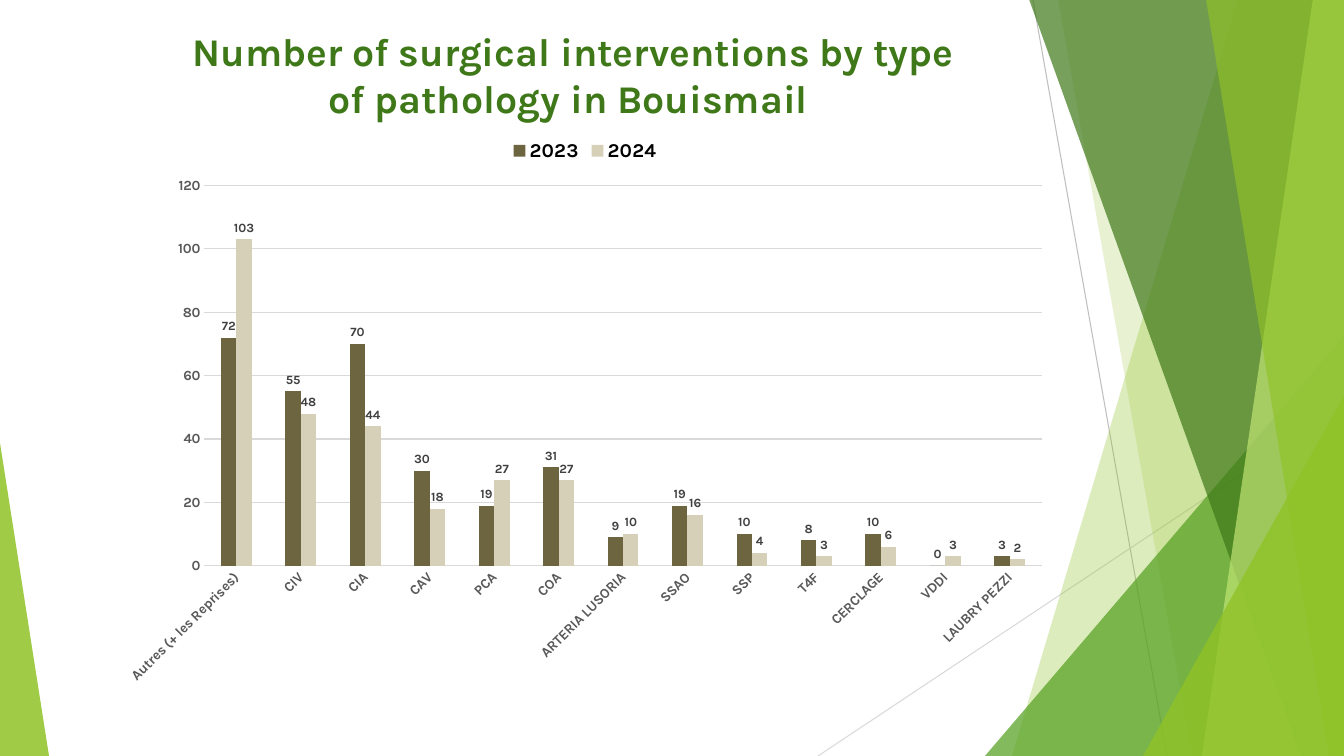
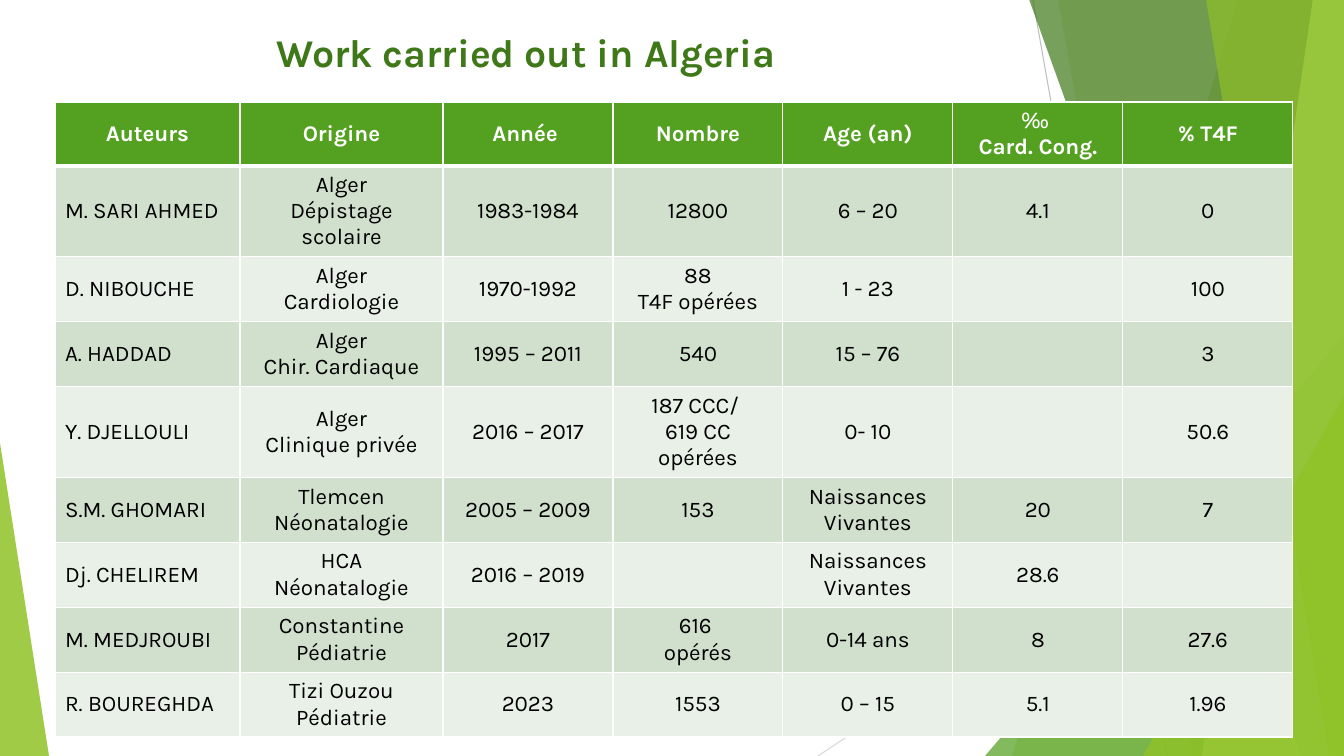
from lxml import etree
from pptx import Presentation
from pptx import util as u
from pptx.chart.data import CategoryChartData
from pptx.dml.color import RGBColor
from pptx.enum import chart as ch, shapes, text
from pptx.oxml.ns import qn

SCALE = 914400 / 100.8
WIDTH, HEIGHT = 1344, 756
FONT = "Karla"
WHITE = RGBColor(0xFF, 0xFF, 0xFF)
BLACK = RGBColor(0x00, 0x00, 0x00)
LIME = RGBColor(0x90, 0xC2, 0x26)
PALE_LIME = RGBColor(0xC0, 0xE4, 0x74)
GREEN = RGBColor(0x54, 0xA0, 0x21)
DARK_GREEN = RGBColor(0x3F, 0x78, 0x19)
BAND_DARK = RGBColor(0xD1, 0xDF, 0xCD)
BAND_LIGHT = RGBColor(0xE9, 0xF0, 0xE8)
GREY = RGBColor(0xBF, 0xBF, 0xBF)
LIGHT_GREY = RGBColor(0xD9, 0xD9, 0xD9)
AXIS_GREY = RGBColor(0x59, 0x59, 0x59)
LABEL_GREY = RGBColor(0x40, 0x40, 0x40)
OLIVE = RGBColor(0x6D, 0x65, 0x40)
SAND = RGBColor(0xD6, 0xD0, 0xB8)


def px(*lengths):
    return [u.Emu(round(n * SCALE)) for n in lengths]


def style(font, size, color, bold=True):
    font.name, font.size, font.bold = FONT, u.Pt(size), bold
    font.color.rgb = color


prs = Presentation()
prs.slide_width, prs.slide_height = px(WIDTH, HEIGHT)

hairlines = [
    ((1033, 0, 1167, HEIGHT), GREY),
    ((WIDTH, 406, 818, HEIGHT), LIGHT_GREY),
]
facets = [
    ("strip", LIME, 30, (1238, 1012)),
    ("strip", LIME, 20, (1058, 1192)),
    ("wedge", GREEN, 72, (985, 336, 359, 1)),
    ("strip", DARK_GREEN, 70, (1029, 1301)),
    ("strip", PALE_LIME, 70, (1313, 1202)),
    ("strip", LIME, 65, (1206, 1329)),
    ("wedge", LIME, 80, (1143, 396, 201, 1)),
    ("wedge", LIME, 85, (0, 443, 49, 0)),
]
titles = [
    ((-34, 22, 1204, 105),
     [" Number of surgical interventions by type", "of pathology in Bouismail"]),
    ((33, 23, 986, 57), ["Work carried out in Algeria"]),
]

slides = []
for title_place, title_lines in titles:
    slide = prs.slides.add_slide(prs.slide_layouts[6])
    slides.append(slide)

    for ends, color in hairlines:
        hairline = slide.shapes.add_connector(shapes.MSO_CONNECTOR.STRAIGHT, *px(*ends))
        hairline.line.color.rgb = color
        hairline.line.width = u.Pt(0.75)
        etree.SubElement(hairline._element.spPr, qn("a:effectLst"))

    for kind, color, opacity, outline in facets:
        if kind == "strip":
            top_left, bottom_left = outline
            builder = slide.shapes.build_freeform(top_left, -1, scale=SCALE)
            builder.add_line_segments([(WIDTH, -1), (WIDTH, HEIGHT), (bottom_left, HEIGHT)])
            facet = builder.convert_to_shape()
        else:
            left, top, width, apex = outline
            facet = slide.shapes.add_shape(
                shapes.MSO_SHAPE.ISOSCELES_TRIANGLE, *px(left, top, width, HEIGHT - top))
            facet.adjustments[0] = apex
        facet.shadow.inherit = False
        facet.line.fill.background()
        facet.fill.solid()
        facet.fill.fore_color.rgb = color
        tint = facet._element.spPr.find(qn("a:solidFill"))[0]
        etree.SubElement(tint, qn("a:alpha"), val=str(opacity * 1000))

    title = slide.shapes.add_textbox(*px(*title_place)).text_frame
    title.word_wrap = True
    for i, line in enumerate(title_lines):
        paragraph = title.add_paragraph() if i else title.paragraphs[0]
        paragraph.alignment = text.PP_ALIGN.CENTER
        run = paragraph.add_run()
        run.text = line
        style(run.font, 28, DARK_GREEN)

interventions_slide, studies_slide = slides

interventions = CategoryChartData()
interventions.categories = [
    "Autres (+ les Reprises)", "CIV", "CIA", "CAV", "PCA", "COA", "ARTERIA LUSORIA",
    "SSAO", "SSP", "T4F", "CERCLAGE", "VDDI", "LAUBRY PEZZI",
]
interventions.add_series("2023", [72, 55, 70, 30, 19, 31, 9, 19, 10, 8, 10, 0, 3])
interventions.add_series("2024", [103, 48, 44, 18, 27, 27, 10, 16, 4, 3, 6, 3, 2])
chart = interventions_slide.shapes.add_chart(
    ch.XL_CHART_TYPE.COLUMN_CLUSTERED, *px(109, 128, 952, 567), interventions).chart
style(chart.font, 10, BLACK, False)
chart.has_title = False
chart.has_legend = True
chart.legend.position = ch.XL_LEGEND_POSITION.TOP
chart.legend.include_in_layout = False
style(chart.legend.font, 14, BLACK)

for axis in (chart.category_axis, chart.value_axis):
    axis.major_tick_mark = axis.minor_tick_mark = ch.XL_TICK_MARK.NONE
    style(axis.tick_labels.font, 10, AXIS_GREY)
pathologies, counts = chart.category_axis, chart.value_axis
pathologies.format.line.color.rgb = LIGHT_GREY
pathologies.format.line.width = u.Pt(0.75)
pathologies._element.find(qn("c:txPr")).find(qn("a:bodyPr")).set("rot", "-2700000")
counts.minimum_scale, counts.maximum_scale, counts.major_unit = 0, 120, 20
counts.format.line.fill.background()
counts.major_gridlines.format.line.color.rgb = LIGHT_GREY
counts.major_gridlines.format.line.width = u.Pt(0.75)

plot = chart.plots[0]
plot.gap_width, plot.overlap, plot.vary_by_categories = 219, 0, False
for year, color in zip(plot.series, (OLIVE, SAND)):
    year.format.fill.solid()
    year.format.fill.fore_color.rgb = color
    labels = year.data_labels
    labels.show_value = True
    labels.position = ch.XL_LABEL_POSITION.OUTSIDE_END
    style(labels.font, 9, LABEL_GREY)

studies = [
    ["Auteurs", "Origine", "Année ", "Nombre", "Age (an)", "‰ \nCard. Cong.", "% T4F"],
    ["M. SARI AHMED", "Alger\nDépistage scolaire", "1983-1984", "12800", "6 – 20", "4.1", "0"],
    ["D. NIBOUCHE", "Alger\nCardiologie", "1970-1992", "88\nT4F opérées", "1 - 23", "", "100"],
    ["A. HADDAD", "Alger\nChir. Cardiaque", "1995 – 2011", "540", "15 – 76", "", "3"],
    ["Y. DJELLOULI", "Alger\nClinique privée", "2016 – 2017",
     "187 CCC/ \n619 CC opérées", "0- 10", "", "50.6"],
    ["S.M. GHOMARI", "Tlemcen\nNéonatalogie", "2005 – 2009", "153",
     "Naissances Vivantes", "20", "7"],
    ["Dj. CHELIREM", "HCA\nNéonatalogie", "2016 – 2019", "", "Naissances Vivantes", "28.6", ""],
    ["M. MEDJROUBI", "Constantine\nPédiatrie", "2017", "616 \nopérés", "0-14 ans", "8", "27.6"],
    ["R. BOUREGHDA", "Tizi Ouzou\nPédiatrie", "2023", "1553", "0 – 15", "5.1", "1.96"],
]
column_widths = [185, 203] + [170] * 5
row_heights = [63, 89, 65, 65, 89, 65, 65, 65, 65]
table = studies_slide.shapes.add_table(
    len(studies), len(column_widths),
    *px(55, 102, sum(column_widths), sum(row_heights))).table
for column, width in zip(table.columns, px(*column_widths)):
    column.width = width
for row, height in zip(table.rows, px(*row_heights)):
    row.height = height

for r, study in enumerate(studies):
    heading = r == 0
    for c, entry in enumerate(study):
        cell = table.cell(r, c)
        cell.vertical_anchor = text.MSO_ANCHOR.MIDDLE
        for side in "LRTB":
            thick = (r, side) in ((0, "B"), (1, "T"))
            border = etree.SubElement(
                cell._tc.get_or_add_tcPr(), qn("a:ln" + side), w=str(u.Pt(3 if thick else 1)))
            paint = etree.SubElement(border, qn("a:solidFill"))
            etree.SubElement(paint, qn("a:srgbClr"), val=str(WHITE))
        cell.fill.solid()
        cell.fill.fore_color.rgb = GREEN if heading else BAND_DARK if r % 2 else BAND_LIGHT
        for i, line in enumerate(entry.split("\n") if entry else []):
            frame = cell.text_frame
            paragraph = frame.add_paragraph() if i else frame.paragraphs[0]
            if heading or c:
                paragraph.alignment = text.PP_ALIGN.CENTER
            run = paragraph.add_run()
            run.text = line
            style(run.font, 16, WHITE if heading else BLACK, heading)

prs.save("out.pptx")
